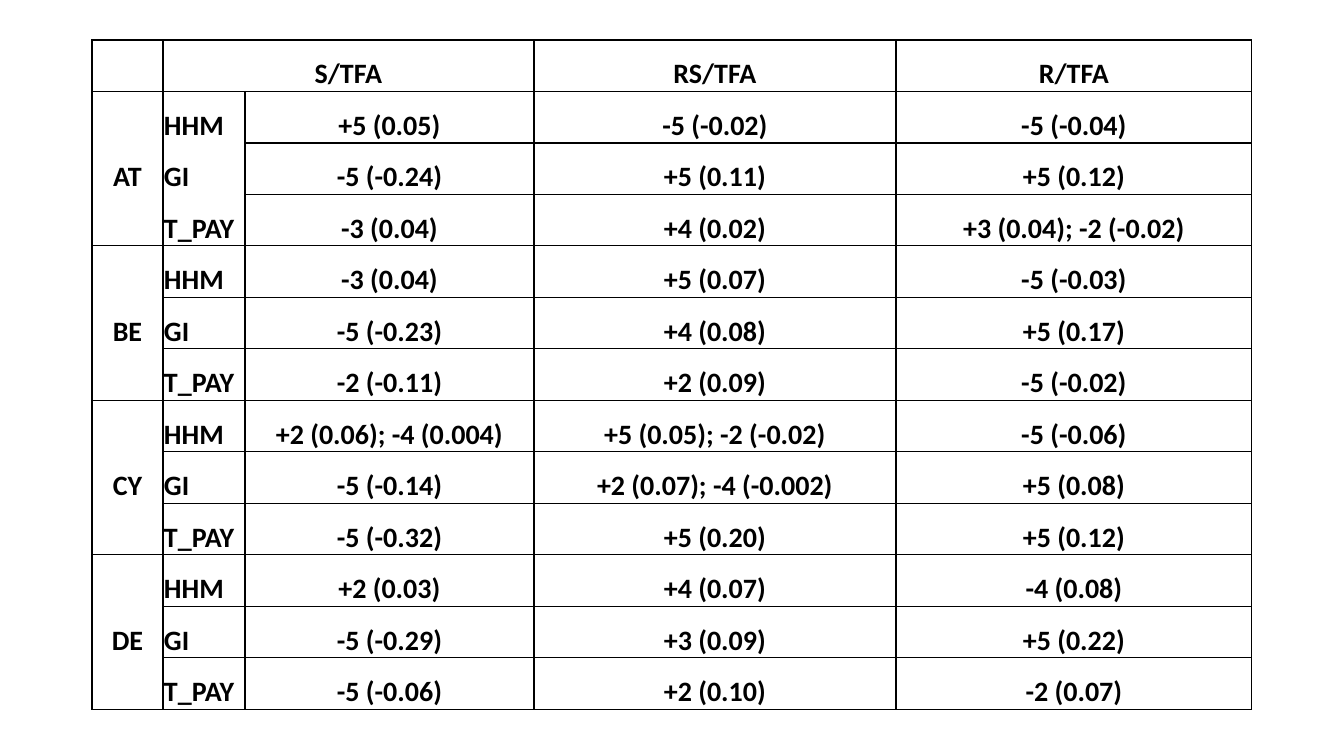
from lxml import etree
from pptx import Presentation
from pptx import util as u
from pptx.dml.color import RGBColor
from pptx.enum import text
from pptx.oxml import ns

PX = 914400 / 100.8
COLORS = {"ink": "000000", "paper": "FFFFFF"}
FONT = {"name": "Calibri", "size": u.Pt(20), "bold": True}
CELL = {"margin_left": 1, "margin_right": 1, "margin_top": 0, "margin_bottom": 0}
COL_WIDTHS = [71, 82, 289, 362, 356]
ROW_HEIGHT = 51
HEADERS = ["S/TFA", "RS/TFA", "R/TFA"]
VARIABLES = ["HHM", "GI", "T_PAY"]
COUNTRIES = {
    "AT": [
        ["+5 (0.05)", "-5 (-0.02)", "-5 (-0.04)"],
        ["-5 (-0.24)", "+5 (0.11)", "+5 (0.12)"],
        ["-3 (0.04)", "+4 (0.02)", "+3 (0.04); -2 (-0.02)"],
    ],
    "BE": [
        ["-3 (0.04)", "+5 (0.07)", "-5 (-0.03)"],
        ["-5 (-0.23)", "+4 (0.08)", "+5 (0.17)"],
        ["-2 (-0.11)", "+2 (0.09)", "-5 (-0.02)"],
    ],
    "CY": [
        ["+2 (0.06); -4 (0.004)", "+5 (0.05); -2 (-0.02)", "-5 (-0.06)"],
        ["-5 (-0.14)", "+2 (0.07); -4 (-0.002)", "+5 (0.08)"],
        ["-5 (-0.32)", "+5 (0.20)", "+5 (0.12)"],
    ],
    "DE": [
        ["+2 (0.03)", "+4 (0.07)", "-4 (0.08)"],
        ["-5 (-0.29)", "+3 (0.09)", "+5 (0.22)"],
        ["-5 (-0.06)", "+2 (0.10)", "-2 (0.07)"],
    ],
}


def px(n):
    return u.Emu(round(n * PX))


def add_borders(cell):
    tcPr = cell._tc.get_or_add_tcPr()
    for i, side in enumerate(["lnL", "lnR", "lnT", "lnB"]):
        ln = etree.Element(ns.qn(f"a:{side}"), w=str(u.Pt(1)))
        fill = etree.SubElement(ln, ns.qn("a:solidFill"))
        etree.SubElement(fill, ns.qn("a:srgbClr"), val=COLORS["ink"])
        tcPr.insert(i, ln)


prs = Presentation()
prs.slide_width, prs.slide_height = px(1344), px(756)
s = prs.slides.add_slide(prs.slide_layouts[6])

n_rows = 1 + len(COUNTRIES) * len(VARIABLES)
table = s.shapes.add_table(
    n_rows, len(COL_WIDTHS), px(92), px(40), px(sum(COL_WIDTHS)), px(n_rows * ROW_HEIGHT)
).table
table.first_row = table.horz_banding = False
for col, width in zip(table.columns, COL_WIDTHS):
    col.width = px(width)
for row in table.rows:
    row.height = px(ROW_HEIGHT)

table.cell(0, 1).merge(table.cell(0, 2))
for c, header in zip([1, 3, 4], HEADERS):
    table.cell(0, c).text = header

for i, (country, results) in enumerate(COUNTRIES.items()):
    top = 1 + i * len(VARIABLES)
    bottom = top + len(VARIABLES) - 1
    table.cell(top, 0).merge(table.cell(bottom, 0))
    table.cell(top, 0).text = country
    for r, (variable, values) in enumerate(zip(VARIABLES, results), top):
        table.cell(r, 1).text = variable
        for c, value in enumerate(values, 2):
            table.cell(r, c).text = value

table.cell(1, 1).merge(table.cell(3, 1))
table.cell(1, 1).text = "\n".join(VARIABLES)

for r in range(n_rows):
    for c in range(len(COL_WIDTHS)):
        cell = table.cell(r, c)
        for key, value in CELL.items():
            setattr(cell, key, px(value))
        cell.vertical_anchor = text.MSO_ANCHOR.MIDDLE
        cell.fill.solid()
        cell.fill.fore_color.rgb = RGBColor.from_string(COLORS["paper"])
        add_borders(cell)
        for p in cell.text_frame.paragraphs:
            is_variable = c == 1 and r > 0
            p.alignment = text.PP_ALIGN.LEFT if is_variable else text.PP_ALIGN.CENTER
            p.line_spacing = 1.5
            for run in p.runs:
                for key, value in FONT.items():
                    setattr(run.font, key, value)
                run.font.color.rgb = RGBColor.from_string(COLORS["ink"])

prs.save("out.pptx")
